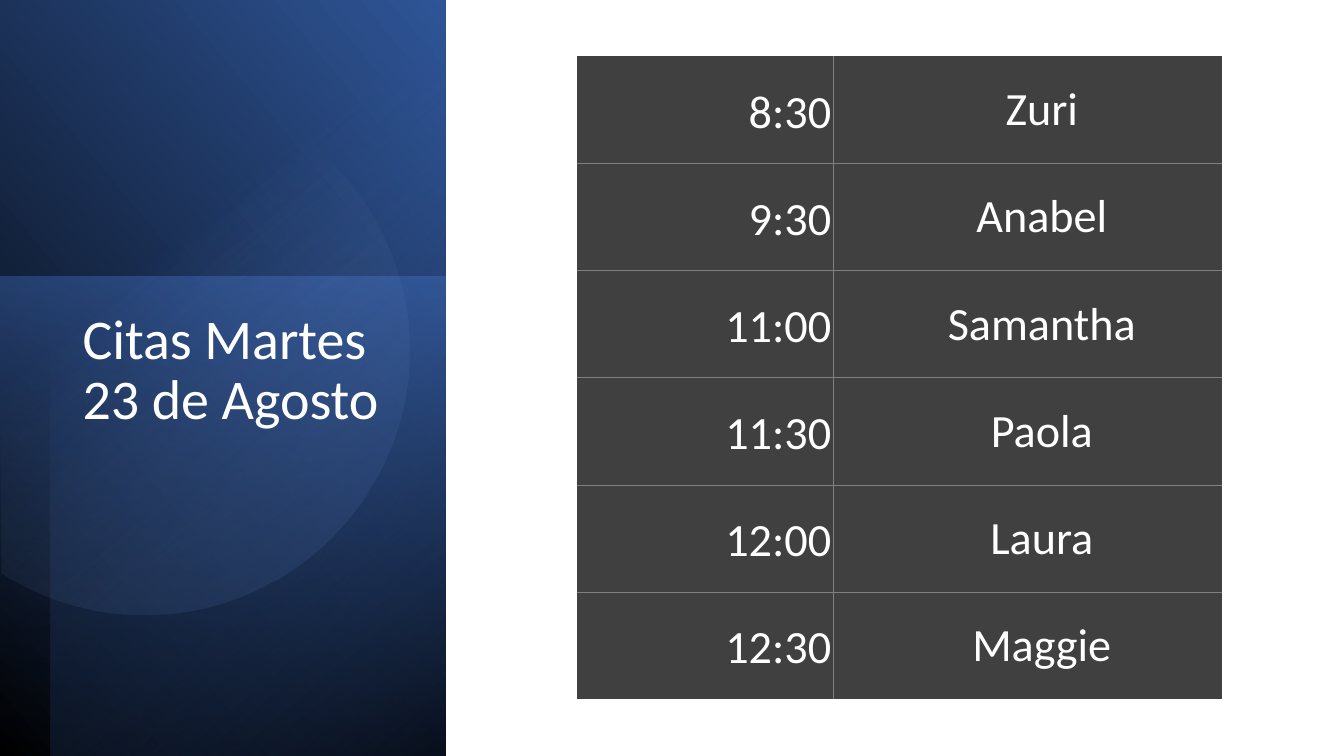
from math import cos, radians, sin

from lxml.etree import SubElement
from pptx import Presentation
from pptx.dml.color import RGBColor
from pptx.enum.shapes import MSO_SHAPE as Shape
from pptx.enum.text import MSO_ANCHOR as Anchor, MSO_AUTO_SIZE as AutoSize, PP_ALIGN as Align
from pptx.oxml.ns import qn
from pptx.util import Cm, Pt

WHITE = RGBColor(0xFF, 0xFF, 0xFF)
BLACK = RGBColor(0x00, 0x00, 0x00)
BLUE = RGBColor(0x44, 0x72, 0xC4)
DEEP_BLUE = RGBColor(0x2F, 0x55, 0x97)
NAVY = RGBColor(0x20, 0x38, 0x64)
PALE_BLUE = RGBColor(0x8F, 0xAA, 0xDC)
CHARCOAL = RGBColor(0x40, 0x40, 0x40)
GRAY = RGBColor(0x80, 0x80, 0x80)
FONT = "Calibri"


def style_panel(sp, rotation, flip, angle, stops):
    """Turn the shape and fill it with (position, colour, opacity) stops, in percent."""
    sp.shadow.inherit = False
    sp.line.fill.background()
    sp.rotation = rotation
    pr = sp._element.spPr
    if flip:
        pr.xfrm.set("flipH", "1")
    sp.fill.background()
    old = pr.find(qn("a:noFill"))
    grad = SubElement(pr, qn("a:gradFill"), rotWithShape="1")
    pr.replace(old, grad)
    gs_list = SubElement(grad, qn("a:gsLst"))
    for pos, color, opacity in stops:
        gs = SubElement(gs_list, qn("a:gs"), pos=str(pos * 1000))
        clr = SubElement(gs, qn("a:srgbClr"), val=str(color))
        if opacity < 100:
            SubElement(clr, qn("a:alpha"), val=str(opacity * 1000))
    SubElement(grad, qn("a:lin"), ang=str(angle * 60000), scaled="0")


def set_border(cell, side, visible):
    pr = cell._tc.get_or_add_tcPr()
    ln = SubElement(pr, qn(f"a:ln{side}"), w=str(Pt(0.5)))
    if visible:
        fill = SubElement(ln, qn("a:solidFill"))
        SubElement(fill, qn("a:srgbClr"), val=str(GRAY))
    else:
        SubElement(ln, qn("a:noFill"))


prs = Presentation()
prs.slide_width, prs.slide_height = Cm(33.87), Cm(19.05)
s = prs.slides.add_slide(prs.slide_layouts[5])

# Gradient side panels: box, rotation, flip, angle, stops
panels = [
    ((-3.94, 3.94, 19.1, 11.23), 90, True, 310, [(0, BLACK, 100), (100, DEEP_BLUE, 100)]),
    ((-0.43, 7.39, 12.09, 11.23), 270, False, 190, [(0, BLUE, 50), (100, NAVY, 0)]),
    ((-3.28, 4.55, 19.05, 9.96), 270, True, 220, [(0, BLACK, 59), (69, BLUE, 0)]),
]
for box, rotation, flip, angle, stops in panels:
    sp = s.shapes.add_shape(Shape.RECTANGLE, *[Cm(v) for v in box])
    style_panel(sp, rotation, flip, angle, stops)

# Circle cut off at the slide's left edge
cx, cy, radius = 4.6, 10, 6.67
points = [(Cm(cx + radius * cos(radians(a))), Cm(cy + radius * sin(radians(a))))
          for a in range(-225, 22, 2)]
builder = s.shapes.build_freeform(*points[0])
builder.add_line_segments(points[1:], close=True)
style_panel(builder.convert_to_shape(), 101.6, False, 310,
            [(39, PALE_BLUE, 0), (100, DEEP_BLUE, 26)])

# Title, in front of the panels
title = s.shapes.title
s.shapes._spTree.append(title._element)
title.left, title.top, title.width, title.height = Cm(1.83), Cm(7.7), Cm(8.03), Cm(8.53)
tf = title.text_frame
tf.text = "Citas Martes 23 de Agosto"
frame_format = {
    "word_wrap": True, "auto_size": AutoSize.NONE, "vertical_anchor": Anchor.TOP,
    "margin_left": Cm(0.25), "margin_right": Cm(0.25),
    "margin_top": Cm(0.13), "margin_bottom": Cm(0.13),
}
for name, value in frame_format.items():
    setattr(tf, name, value)
p = tf.paragraphs[0]
p.alignment, p.line_spacing = Align.LEFT, 0.9
p.runs[0].font.name, p.runs[0].font.size = FONT, Pt(40)
p.runs[0].font.color.rgb = WHITE

# Appointment table
appointments = [
    ("8:30", "Zuri"), ("9:30", "Anabel"), ("11:00", "Samantha"),
    ("11:30", "Paola"), ("12:00", "Laura"), ("12:30", "Maggie"),
]
col_widths, row_height = (6.45, 9.8), 2.7
last_row, last_col = len(appointments) - 1, len(col_widths) - 1
table = s.shapes.add_table(len(appointments), len(col_widths), Cm(14.55), Cm(1.42),
                           Cm(sum(col_widths)), Cm(row_height * len(appointments))).table
table.first_row = table.horz_banding = False
for col, width in zip(table.columns, col_widths):
    col.width = Cm(width)

col_formats = [(Anchor.BOTTOM, Align.RIGHT), (Anchor.MIDDLE, Align.CENTER)]
margins = {"margin_left": Cm(0.76), "margin_top": Cm(0.58),
           "margin_right": Cm(0.05), "margin_bottom": Cm(0.58)}
for i, appointment in enumerate(appointments):
    table.rows[i].height = Cm(row_height)
    for j, text in enumerate(appointment):
        cell = table.cell(i, j)
        cell.text = text
        for name, value in margins.items():
            setattr(cell, name, value)
        p = cell.text_frame.paragraphs[0]
        cell.vertical_anchor, p.alignment = col_formats[j]
        font = p.runs[0].font
        font.name, font.size, font.bold = FONT, Pt(33), False
        font.color.rgb = WHITE
        # Only the inner grid lines show
        for side, visible in (("L", j > 0), ("R", j < last_col),
                              ("T", i > 0), ("B", i < last_row)):
            set_border(cell, side, visible)
        cell.fill.solid()
        cell.fill.fore_color.rgb = CHARCOAL

prs.save("out.pptx")
